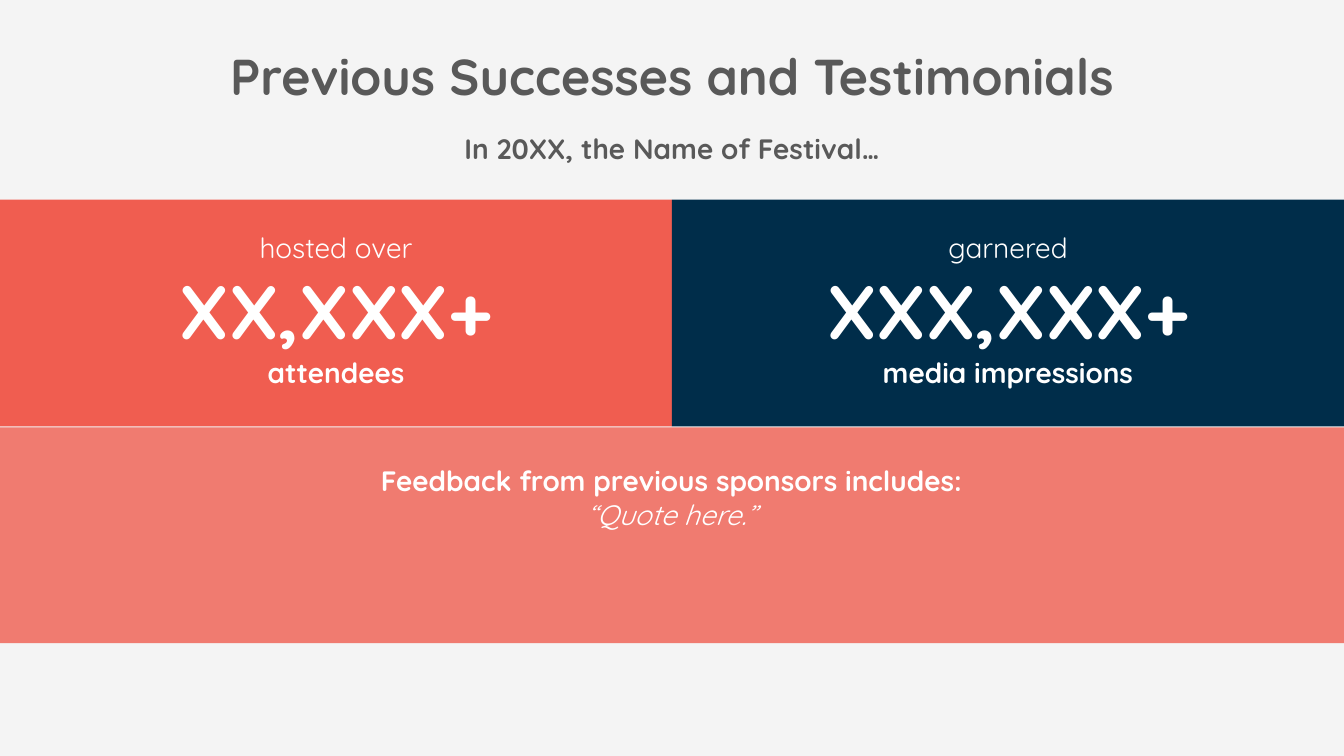
from lxml.etree import SubElement
from pptx import Presentation
from pptx.dml.color import RGBColor
from pptx.enum.shapes import MSO_SHAPE
from pptx.enum.text import MSO_ANCHOR, MSO_AUTO_SIZE, PP_ALIGN
from pptx.oxml.ns import qn
from pptx.util import Inches, Pt

PALE = RGBColor(0xF4, 0xF4, 0xF4)
GRAY = RGBColor(0x59, 0x59, 0x59)
WHITE = RGBColor(0xFF, 0xFF, 0xFF)
CORAL = RGBColor(0xF0, 0x5D, 0x50)
NAVY = RGBColor(0x00, 0x2D, 0x4A)

WIDTH = 13.33
HALF = WIDTH / 2


class Page:
    """Holds the text style and the slide being built."""

    font = "Quicksand"

    def __init__(self, slide):
        self.slide = slide
        slide.background.fill.solid()
        slide.background.fill.fore_color.rgb = PALE

    def typeset(self, frame, lines, color):
        """Fill a frame with centred lines of (text, size, bold, italic)."""
        frame.word_wrap = True
        frame.auto_size = MSO_AUTO_SIZE.NONE
        frame.vertical_anchor = MSO_ANCHOR.TOP
        for i, (text, size, bold, italic) in enumerate(lines):
            para = frame.add_paragraph() if i else frame.paragraphs[0]
            para.text = text
            para.alignment = PP_ALIGN.CENTER
            para.font.name = self.font
            para.font.size = Pt(size)
            para.font.bold = bold
            para.font.italic = italic
            para.font.color.rgb = color

    def title(self, text, left, top, width, height):
        shape = self.slide.shapes.title
        shape.left, shape.top = Inches(left), Inches(top)
        shape.width, shape.height = Inches(width), Inches(height)
        self.typeset(shape.text_frame, [(text, 36, True, False)], GRAY)

    def text(self, lines, left, top, width, height, color=WHITE):
        box = self.slide.shapes.add_textbox(
            Inches(left), Inches(top), Inches(width), Inches(height))
        self.typeset(box.text_frame, lines, color)

    def band(self, left, top, width, height, color, alpha=100):
        shape = self.slide.shapes.add_shape(
            MSO_SHAPE.RECTANGLE,
            Inches(left), Inches(top), Inches(width), Inches(height))
        shape.shadow.inherit = False
        shape.line.fill.background()
        shape.fill.solid()
        shape.fill.fore_color.rgb = color
        if alpha < 100:
            tint = shape.element.spPr.find(qn("a:solidFill"))[0]
            SubElement(tint, qn("a:alpha")).set("val", str(alpha * 1000))


def main():
    deck = Presentation()
    deck.slide_width, deck.slide_height = Inches(WIDTH), Inches(7.5)
    page = Page(deck.slides.add_slide(deck.slide_layouts[5]))

    # Heading
    page.title("Previous Successes and Testimonials", 1.71, 0.4, 9.91, 0.71)
    page.text([("In 20XX, the Name of Festival…", 20, True, False)],
              HALF / 2, 1.26, HALF, 0.44, GRAY)

    # Sponsor feedback
    page.band(0, 4.24, WIDTH, 2.14, CORAL, alpha=80)
    page.text([("Feedback from previous sponsors includes:", 20, True, False),
               ("“Quote here.”", 20, False, True)],
              2.82, 4.55, 7.68, 0.77)

    # Key figures, side by side
    facts = [("hosted over", "XX,XXX+", "attendees", CORAL),
             ("garnered", "XXX,XXX+", "media impressions", NAVY)]
    for i, (lead, count, label, color) in enumerate(facts):
        page.band(i * HALF, 1.98, HALF, 2.25, color)
        page.text([(lead, 20, False, False),
                   (count, 54, True, False),
                   (label, 20, True, False)],
                  i * HALF, 2.24, HALF, 1.68)

    deck.save("out.pptx")


if __name__ == "__main__":
    main()
